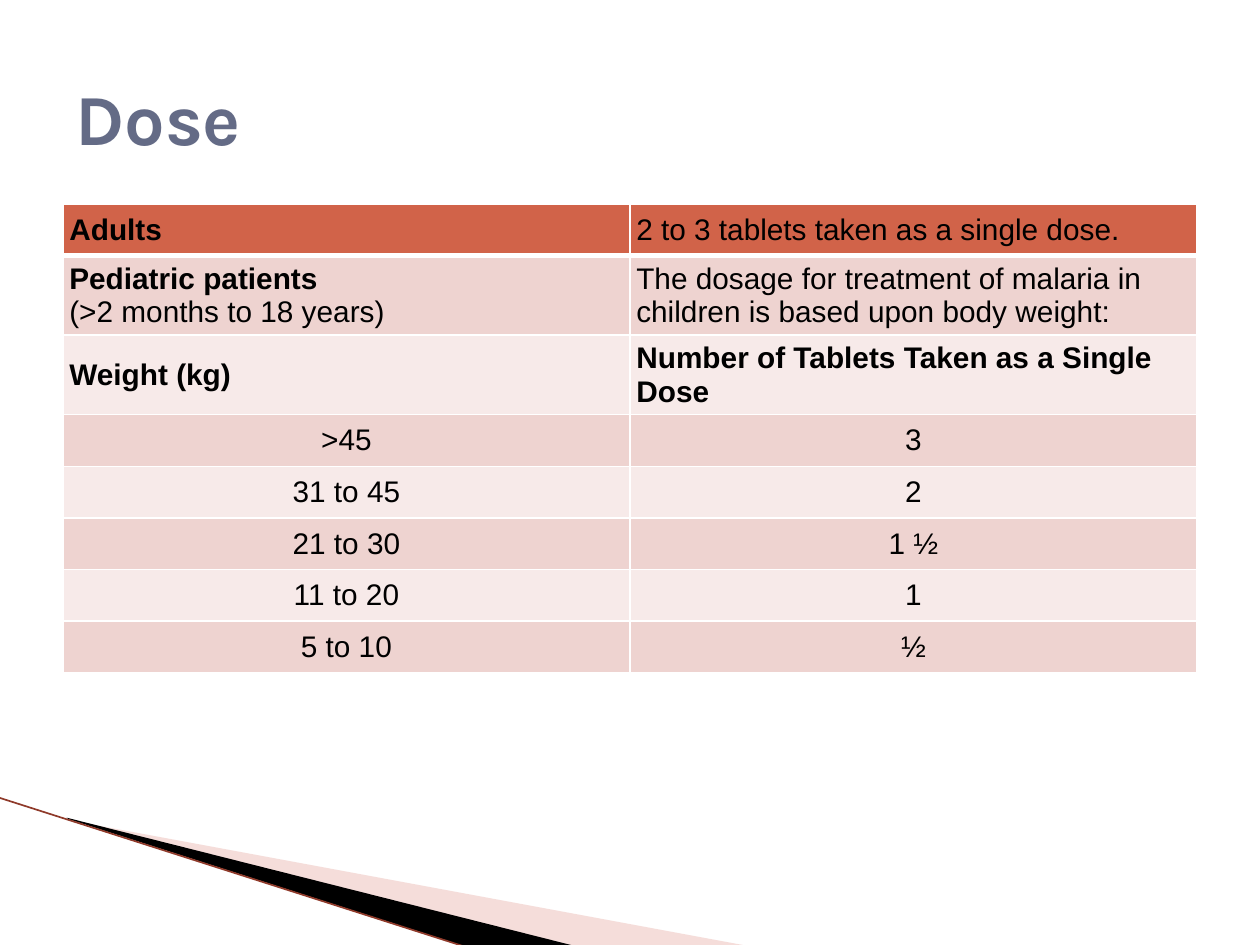
from dataclasses import dataclass

from lxml import etree
from pptx import Presentation, util as u
from pptx.dml.color import RGBColor
from pptx.enum import shapes, text
from pptx.oxml.ns import qn

WIDTH, HEIGHT = u.Inches(10), u.Inches(7.5)
MARGIN = 0.05  # share of the slide width

WHITE = RGBColor(0xFF, 0xFF, 0xFF)
BLACK = RGBColor(0, 0, 0)
SLATE = RGBColor(0x64, 0x6B, 0x86)
RUST = RGBColor(0xD1, 0x63, 0x49)
DARK_BAND = RGBColor(0xEE, 0xD3, 0xD0)
LIGHT_BAND = RGBColor(0xF7, 0xEA, 0xE9)
BLUSH = RGBColor(0xE7, 0xAC, 0xA4)
EDGE_RED = RGBColor(0x8F, 0x3A, 0x2A)


@dataclass(frozen=True)
class Wedge:
    points: tuple[tuple[float, float], ...]  # inches
    color: RGBColor
    opacity: int = 100  # percent


@dataclass(frozen=True)
class DoseRow:
    group: str
    dose: str
    bold: tuple[bool, bool] = (False, False)
    align: text.PP_ALIGN = text.PP_ALIGN.CENTER


LEFT = text.PP_ALIGN.LEFT
WEDGES = (
    Wedge(((0.55, 6.51), (5.95, 7.51), (4.56, 7.51), (0.55, 6.5)), BLUSH, 40),
    Wedge(((0.53, 6.49), (4.57, 7.51), (3.72, 7.52), (0.54, 6.5)), BLACK),
)
DOSES = (
    DoseRow("Adults", "2 to 3 tablets taken as a single dose.", (True, False), LEFT),
    DoseRow("Pediatric patients\v(>2 months to 18 years)",
            "The dosage for treatment of malaria in children is based upon body weight:",
            (True, False), LEFT),
    DoseRow("Weight (kg)", "Number of Tablets Taken as a Single Dose", (True, True), LEFT),
    DoseRow(">45", "3"),
    DoseRow("31 to 45", "2"),
    DoseRow("21 to 30", "1 ½"),
    DoseRow("11 to 20", "1"),
    DoseRow("5 to 10", "½"),
)


def draw_wedge(slide, wedge: Wedge) -> None:
    start, *rest = [(u.Inches(x), u.Inches(y)) for x, y in wedge.points]
    builder = slide.shapes.build_freeform(*start)
    builder.add_line_segments(rest, close=True)
    shape = builder.convert_to_shape()
    shape.shadow.inherit = False
    shape.line.fill.background()
    shape.fill.solid()
    shape.fill.fore_color.rgb = wedge.color
    if wedge.opacity < 100:
        color = shape.fill._xPr.find(".//" + qn("a:srgbClr"))
        etree.SubElement(color, qn("a:alpha"), val=str(wedge.opacity * 1000))


def draw_edge(slide) -> None:
    edge = slide.shapes.add_connector(
        shapes.MSO_CONNECTOR.STRAIGHT,
        u.Inches(-0.01), u.Inches(6.33), u.Inches(3.71), u.Inches(7.52))
    edge.line.color.rgb = EDGE_RED
    edge.line.width = u.Pt(0.95)
    etree.SubElement(edge._element.spPr, qn("a:effectLst"))


def set_borders(cell, bottom: float) -> None:
    """White rules on all four sides; they must come before the fill."""
    props = cell._tc.get_or_add_tcPr()
    for index, (side, width) in enumerate(
            (("lnL", 1), ("lnR", 1), ("lnT", 1), ("lnB", bottom))):
        rule = etree.Element(qn(f"a:{side}"), w=str(u.Pt(width)))
        fill = etree.SubElement(rule, qn("a:solidFill"))
        etree.SubElement(fill, qn("a:srgbClr"), val=str(WHITE))
        props.insert(index, rule)


def fill_cell(cell, words: str, bold: bool, align: text.PP_ALIGN, color: RGBColor) -> None:
    cell.margin_left = cell.margin_right = u.Inches(0.05)
    cell.margin_top = cell.margin_bottom = u.Inches(0.05)
    cell.vertical_anchor = text.MSO_ANCHOR.MIDDLE
    cell.fill.solid()
    cell.fill.fore_color.rgb = color
    paragraph = cell.text_frame.paragraphs[0]
    paragraph.text = words
    paragraph.alignment = align
    for index, run in enumerate(paragraph.runs):
        run.font.name, run.font.size = "Arial", u.Pt(17)
        run.font.color.rgb = BLACK
        run.font.bold = bold and index == 0  # only the first line is a heading


def draw_doses(slide) -> None:
    row_height = u.Inches(0.41)
    table = slide.shapes.add_table(
        len(DOSES), 2, int(WIDTH * MARGIN), u.Inches(1.62),
        int(WIDTH * (1 - 2 * MARGIN)), row_height * len(DOSES)).table
    for r, dose in enumerate(DOSES):
        table.rows[r].height = row_height
        color = RUST if r == 0 else DARK_BAND if r % 2 else LIGHT_BAND
        for c, words in enumerate((dose.group, dose.dose)):
            cell = table.cell(r, c)
            fill_cell(cell, words, dose.bold[c], dose.align, color)
            set_borders(cell, bottom=3 if r == 0 else 1)


def draw_title(slide) -> None:
    title = slide.shapes.add_textbox(
        int(WIDTH * MARGIN), int(HEIGHT * 0.04),
        int(WIDTH * (1 - 2 * MARGIN)), u.Inches(1.25))
    frame = title.text_frame
    frame.word_wrap = True
    frame.vertical_anchor = text.MSO_ANCHOR.MIDDLE
    frame.text = "Dose"
    font = frame.paragraphs[0].runs[0].font
    font.name, font.size, font.bold = "Karla", u.Pt(41), True
    font.color.rgb = SLATE


def main() -> None:
    deck = Presentation()
    deck.slide_width, deck.slide_height = WIDTH, HEIGHT
    slide = deck.slides.add_slide(deck.slide_layouts[6])
    # Corner decoration
    for wedge in WEDGES:
        draw_wedge(slide, wedge)
    draw_edge(slide)
    # Content
    draw_doses(slide)
    draw_title(slide)
    deck.save("out.pptx")


if __name__ == "__main__":
    main()
